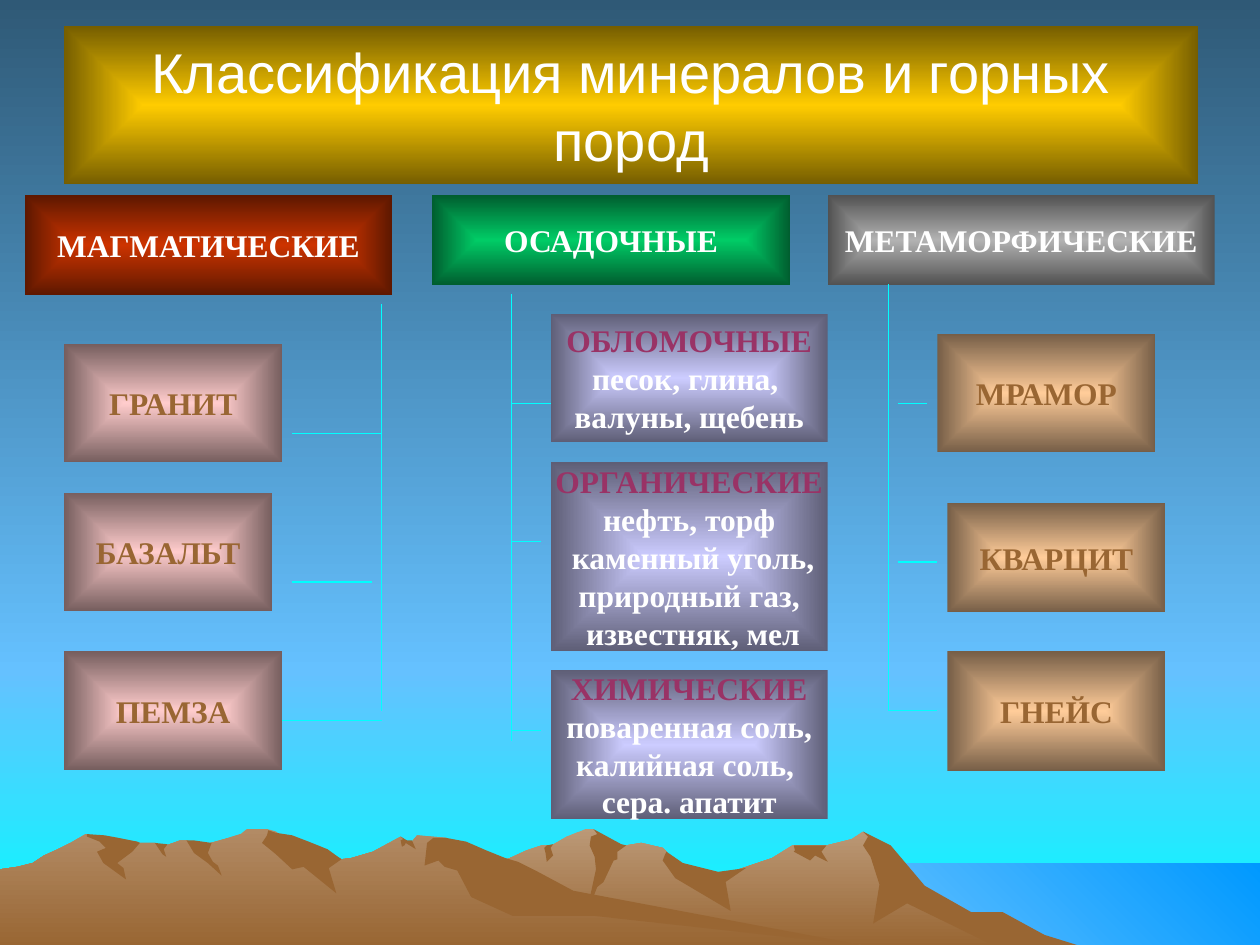
from typing import NamedTuple

from lxml.etree import SubElement
from pptx import Presentation
from pptx.dml.color import RGBColor
from pptx.enum.shapes import MSO_CONNECTOR, MSO_SHAPE
from pptx.enum.text import MSO_ANCHOR, MSO_AUTO_SIZE, PP_ALIGN
from pptx.oxml import parse_xml
from pptx.oxml.ns import nsdecls, qn
from pptx.util import Pt

PX = 9144
WIDTH, HEIGHT, HORIZON = 1000, 750, 533
COLUMN_TOP = 155
EDGE_SHADE = 118 / 255
DOWNWARD, TO_UPPER_RIGHT = 90, 315
WHITE, BROWN, PLUM, CYAN = "FFFFFF", "996633", "993366", "00FFFF"
SKY, SEA, GOLD = "65C1FF", "0099FF", "FFCC00"


class Mountain(NamedTuple):
    """A ridge outline, the tint of its peaks and the outlines of its shaded slopes."""
    tint: str
    ridge: list
    shades: list


class Card(NamedTuple):
    """A rock card and the branch (start x, end x, y) that leads to it."""
    text: str
    left: int
    top: int
    branch: tuple
    width: int = 173
    height: int = 94


class Column(NamedTuple):
    """A class of rocks; lengths inside it count from its top left corner."""
    title: str
    left: int
    width: int
    header_height: int
    header_color: str
    card_color: str
    trunk_x: int
    trunk_pieces: list
    cards: list


EAST_MOUNTAIN = Mountain("BB9977", [
    (802, 740), (778, 727), (764, 723), (723, 698), (702, 671), (685, 660), (676, 666),
    (656, 671), (629, 671), (613, 681), (566, 697), (536, 690), (529, 676), (526, 673),
    (509, 669), (497, 671), (486, 673), (474, 661), (471, 658), (465, 658), (450, 664),
    (438, 671), (430, 671), (418, 675), (405, 681), (394, 685), (355, 698), (327, 709),
    (277, 739), (258, 751), (821, 751)], [
    [(796, 724), (771, 724), (734, 703), (707, 671), (685, 660), (689, 664), (685, 671),
     (691, 680), (698, 702), (693, 733), (720, 717), (792, 752), (858, 751), (829, 742)],
    [(471, 658), (474, 662), (469, 664), (468, 671), (472, 680), (473, 690), (465, 727),
     (474, 704), (479, 700), (487, 683), (490, 682), (490, 676), (497, 671), (493, 670)],
    [(529, 676), (528, 678), (526, 683), (536, 697), (580, 723), (576, 700), (592, 689),
     (570, 692), (542, 685)],
    [(650, 671), (630, 671), (631, 675), (630, 676), (643, 683), (647, 679), (657, 684),
     (652, 676), (656, 671)],
    [(433, 677), (432, 673), (434, 671), (439, 670), (437, 673), (439, 679), (434, 684)]])
WEST_MOUNTAIN = Mountain("B28B65", [
    (690, 751), (667, 748), (432, 712), (354, 665), (331, 663), (327, 668), (323, 668),
    (318, 664), (296, 676), (279, 681), (271, 682), (260, 676), (236, 681), (223, 663),
    (219, 660), (212, 658), (196, 658), (191, 662), (178, 666), (160, 671), (148, 667),
    (143, 667), (132, 671), (128, 671), (123, 669), (111, 669), (94, 671), (68, 662),
    (56, 669), (46, 674), (35, 679), (26, 685), (14, 688), (0, 690), (0, 751)], [
    [(212, 663), (208, 669), (219, 678), (232, 690), (241, 688), (267, 709), (261, 689),
     (271, 682), (260, 674), (245, 668), (232, 663), (219, 661), (213, 659)],
    [(370, 668), (354, 665), (344, 665), (339, 669), (337, 687), (348, 683), (353, 688),
     (363, 691), (374, 712), (407, 727), (472, 727), (690, 751), (683, 750), (455, 707),
     (427, 692), (411, 684), (401, 681), (386, 675)],
    [(318, 667), (320, 666), (318, 664), (323, 667), (327, 667), (330, 674), (322, 669),
     (321, 671), (319, 672)],
    [(154, 667), (168, 669), (165, 677), (169, 684), (173, 687), (176, 695), (165, 685),
     (154, 677), (148, 667)],
    [(133, 670), (130, 674), (132, 680), (129, 678), (123, 669)],
    [(109, 668), (111, 669), (105, 676), (93, 685), (98, 689), (100, 698), (82, 685),
     (77, 676), (84, 673), (79, 668), (69, 664), (69, 662), (83, 663), (94, 665)]])

IGNEOUS = Column("МАГМАТИЧЕСКИЕ", 20, 291, 79, "CC3300", "FFCCCC", 283, [(126, 409), (133, 86)], [
    Card("ГРАНИТ", 31, 118, (212, 283, 189)),
    Card("БАЗАЛЬТ", 31, 236, (212, 275, 307), width=165),
    Card("ПЕМЗА", 31, 362, (204, 283, 417))])
SEDIMENTARY = Column("ОСАДОЧНЫЕ", 343, 284, 71, "00CC66", "CCCCFF", 63, [(126, 433), (133, 78)], [
    Card("ОБЛОМОЧНЫЕ\nпесок, глина, \nвалуны, щебень", 94, 94, (63, 94, 165), 220, 102),
    Card("ОРГАНИЧЕСКИЕ\nнефть, торф\n каменный уголь,\nприродный газ,\n известняк, мел",
         94, 212, (63, 86, 275), 220, 150),
    Card("ХИМИЧЕСКИЕ\nповаренная соль,\nкалийная соль, \nсера. апатит",
         94, 377, (63, 86, 425), 220, 118)])
METAMORPHIC = Column("МЕТАМОРФИЧЕСКИЕ", 657, 307, 71, "B2B2B2", "FFCC99", 48, [(118, 409), (157, 70)], [
    Card("МРАМОР", 87, 110, (56, 79, 165)),
    Card("КВАРЦИТ", 95, 244, (56, 87, 291), height=87),
    Card("ГНЕЙС", 95, 362, (48, 87, 409), height=95)])


def color(value):
    """Return the colour for a hex string."""
    return RGBColor.from_string(value)


def darken(value):
    """Return the hex colour that a bevelled shape has at its edge."""
    return str(RGBColor(*(round(channel * EDGE_SHADE) for channel in color(value))))


def fill_gradient(shape, start, end, direction):
    """Fill a shape with a two-colour gradient along a DrawingML direction."""
    shape.fill.background()
    properties = shape.element.spPr
    stops = "".join(f'<a:gs pos="{position}"><a:srgbClr val="{value}"/></a:gs>'
                    for position, value in [(0, start), (100000, end)])
    gradient = parse_xml(f'<a:gradFill {nsdecls("a")} rotWithShape="1">'
                         f'<a:gsLst>{stops}</a:gsLst>{direction}</a:gradFill>')
    properties.replace(properties.find(qn("a:noFill")), gradient)


def fill_linear(shape, start, end, angle):
    """Fill a shape from one colour to another at an angle in degrees."""
    fill_gradient(shape, start, end, f'<a:lin ang="{angle * 60000}" scaled="0"/>')


def fill_bevel(shape, light):
    """Fill a shape from a light centre to its darkened edges."""
    sides = " ".join(f'{side}="50000"' for side in "ltrb")
    fill_gradient(shape, light, darken(light),
                  f'<a:path path="shape"><a:fillToRect {sides}/></a:path>')


def add_rectangle(slide, left, top, width, height):
    """Add a rectangle without shadow or border."""
    shape = slide.shapes.add_shape(
        MSO_SHAPE.RECTANGLE, left * PX, top * PX, width * PX, height * PX)
    shape.shadow.inherit = False
    shape.line.fill.background()
    return shape


def add_slope(slide, points):
    """Add a closed brown outline through the points."""
    builder = slide.shapes.build_freeform(*points[0], scale=PX)
    builder.add_line_segments(points[1:], close=True)
    shape = builder.convert_to_shape()
    shape.shadow.inherit = False
    shape.line.fill.background()
    shape.fill.solid()
    shape.fill.fore_color.rgb = color(BROWN)
    return shape


def add_line(slide, x1, y1, x2, y2):
    """Add a thin cyan connector."""
    line = slide.shapes.add_connector(
        MSO_CONNECTOR.STRAIGHT, x1 * PX, y1 * PX, x2 * PX, y2 * PX)
    line.line.color.rgb = color(CYAN)
    line.line.width = Pt(0.75)
    SubElement(line.element.spPr, qn("a:effectLst"))


def write_text(shape, text, first_color, font="Times New Roman", size=18, bold=True, wrap=False):
    """Write centred text, its first line in one colour and the others white."""
    frame = shape.text_frame
    frame.text = text
    frame.word_wrap = wrap
    frame.auto_size = MSO_AUTO_SIZE.NONE
    frame.vertical_anchor = MSO_ANCHOR.MIDDLE
    for index, paragraph in enumerate(frame.paragraphs):
        paragraph.alignment = PP_ALIGN.CENTER
        for run in paragraph.runs:
            run.font.name, run.font.size, run.font.bold = font, Pt(size), bold
            run.font.color.rgb = color(WHITE if index else first_color)


def add_label(slide, left, top, width, height, light, text, text_color):
    """Add a bevelled rectangle with text."""
    label = add_rectangle(slide, left, top, width, height)
    fill_bevel(label, light)
    write_text(label, text, text_color)


def draw_sky_and_sea(slide, sea_left, sea_top):
    """Draw the sky in two bands that overlap by one px, and the sea."""
    low_top = HORIZON - 1
    for box, start, end, angle in [
            ((0, low_top, WIDTH, HEIGHT - low_top), SKY, CYAN, DOWNWARD),
            ((0, 0, WIDTH, HORIZON), darken(SKY), SKY, DOWNWARD),
            ((sea_left, sea_top, WIDTH - sea_left, HEIGHT - sea_top), SKY, SEA, TO_UPPER_RIGHT)]:
        fill_linear(add_rectangle(slide, *box), start, end, angle)


def draw_mountain(slide, mountain):
    """Draw a ridge and then its shaded slopes."""
    fill_linear(add_slope(slide, mountain.ridge), mountain.tint, BROWN, DOWNWARD)
    for points in mountain.shades:
        add_slope(slide, points)


def draw_title(slide, left, top, width, height):
    """Place the title placeholder in front of the scenery."""
    title = slide.shapes.title
    title.element.getparent().append(title.element)
    title.left, title.top = left * PX, top * PX
    title.width, title.height = width * PX, height * PX
    fill_bevel(title, GOLD)
    write_text(title, "Классификация минералов и горных пород", WHITE,
               font="Arial", size=32, bold=False, wrap=True)


def draw_column(slide, column, top):
    """Draw a header, the trunk below it, and a branch and card for each rock."""
    left = column.left
    add_label(slide, left, top, column.width, column.header_height,
              column.header_color, column.title, WHITE)
    trunk_x = left + column.trunk_x
    for start, end in column.trunk_pieces:
        add_line(slide, trunk_x, top + start, trunk_x, top + end)
    for card in column.cards:
        start, end, y = card.branch
        add_line(slide, left + start, top + y, left + end, top + y)
        add_label(slide, left + card.left, top + card.top, card.width, card.height,
                  column.card_color, card.text, PLUM if "\n" in card.text else BROWN)


def main():
    """Build and save the slide."""
    presentation = Presentation()
    presentation.slide_width, presentation.slide_height = WIDTH * PX, HEIGHT * PX
    slide = presentation.slides.add_slide(presentation.slide_layouts[5])
    draw_sky_and_sea(slide, sea_left=683, sea_top=685)
    for mountain in (EAST_MOUNTAIN, WEST_MOUNTAIN):
        draw_mountain(slide, mountain)
    draw_title(slide, 51, 21, 900, 125)
    for column in (IGNEOUS, SEDIMENTARY, METAMORPHIC):
        draw_column(slide, column, COLUMN_TOP)
    presentation.save("out.pptx")


if __name__ == "__main__":
    main()
